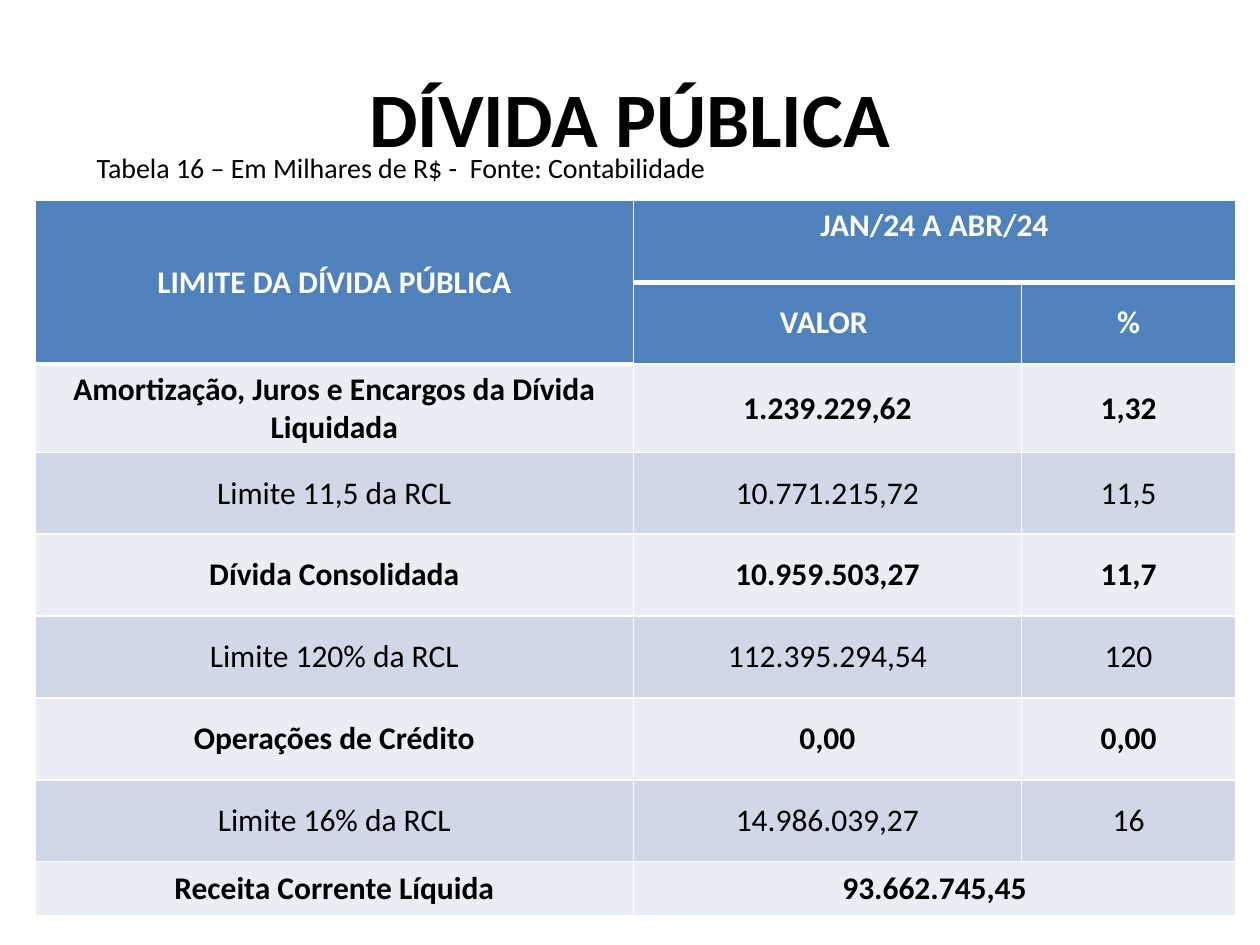
from lxml import etree
from pptx import Presentation
from pptx import util as u
from pptx.dml import color
from pptx.enum import text
from pptx.oxml import ns

WHITE, BLACK, BLUE = "FFFFFF", "000000", "4F81BD"
LIGHT_BAND, DARK_BAND = "E9EDF4", "D0D8E8"


def format_text(frame, size, hex_color, bold, align):
    para = frame.paragraphs[0]
    para.alignment = align
    for span in para.runs:
        span.font.name = "Calibri"
        span.font.size = u.Pt(size)
        span.font.bold = bold
        span.font.color.rgb = color.RGBColor.from_string(hex_color)


def add_border(cell, side, points):
    line = etree.SubElement(cell._tc.get_or_add_tcPr(), ns.qn(f"a:ln{side}"), w=str(u.Pt(points)))
    fill = etree.SubElement(line, ns.qn("a:solidFill"))
    etree.SubElement(fill, ns.qn("a:srgbClr"), val=WHITE)


deck = Presentation()
deck.slide_width, deck.slide_height = u.Cm(25.4), u.Cm(19.05)
page = deck.slides.add_slide(deck.slide_layouts[6])

# Title
title = page.shapes.add_textbox(u.Cm(1.27), u.Cm(0.76), u.Cm(22.86), u.Cm(3.18))
title.text_frame.word_wrap = True
title.text_frame.vertical_anchor = text.MSO_ANCHOR.MIDDLE
title.text_frame.text = "DÍVIDA PÚBLICA"
format_text(title.text_frame, 44, BLACK, True, text.PP_ALIGN.CENTER)

# Table caption
caption = page.shapes.add_textbox(u.Cm(1.7), u.Cm(2.92), u.Cm(22.86), u.Cm(1.6))
caption.text_frame.word_wrap = True
caption.text_frame.text = "Tabela 16 – Em Milhares de R$ -  Fonte: Contabilidade"
caption.text_frame.paragraphs[0].space_before = u.Pt(3.2)
format_text(caption.text_frame, 16, BLACK, False, text.PP_ALIGN.LEFT)

# Debt limits table
rows = [
    ("LIMITE DA DÍVIDA PÚBLICA", "JAN/24 A ABR/24", ""),
    ("", "VALOR ", "%"),
    ("Amortização, Juros e Encargos da Dívida Liquidada", "1.239.229,62", "1,32"),
    ("Limite 11,5 da RCL", "10.771.215,72", "11,5"),
    ("Dívida Consolidada", "10.959.503,27", "11,7"),
    ("Limite 120% da RCL", "112.395.294,54", "120"),
    ("Operações de Crédito", "0,00", "0,00"),
    ("Limite 16% da RCL", "14.986.039,27", "16"),
    ("Receita Corrente Líquida", "93.662.745,45", ""),
]
column_widths = [12.06, 7.82, 4.32]
row_heights = [1.65] * 8 + [1.09]
table = page.shapes.add_table(
    len(rows), len(column_widths), u.Cm(0.71), u.Cm(4.04),
    u.Cm(sum(column_widths)), u.Cm(sum(row_heights)),
).table
for column, width in zip(table.columns, column_widths):
    column.width = u.Cm(width)
for row, height in zip(table.rows, row_heights):
    row.height = u.Cm(height)

# Merged cells: row heading, period and total
for first, last in [((0, 0), (1, 0)), ((0, 1), (0, 2)), ((8, 1), (8, 2))]:
    table.cell(*first).merge(table.cell(*last))

# Cell text, borders and bands
thick_below = {(0, 0), (0, 1), (0, 2), (1, 0)}
for r, values in enumerate(rows):
    header = r < 2
    light = r % 2 == 0
    band = BLUE if header else LIGHT_BAND if light else DARK_BAND
    for c, value in enumerate(values):
        cell = table.cell(r, c)
        period = (r, c) == (0, 1)
        cell.vertical_anchor = text.MSO_ANCHOR.TOP if period else text.MSO_ANCHOR.MIDDLE
        if not cell.is_spanned:
            cell.text_frame.text = value
            format_text(cell.text_frame, 18, WHITE if header else BLACK,
                        header or light, text.PP_ALIGN.CENTER)
        add_border(cell, "L", 1)
        add_border(cell, "R", 1)
        add_border(cell, "T", 3 if (r - 1, c) in thick_below else 1)
        add_border(cell, "B", 3 if (r, c) in thick_below else 1)
        cell.fill.solid()
        cell.fill.fore_color.rgb = color.RGBColor.from_string(band)

deck.save("out.pptx")
